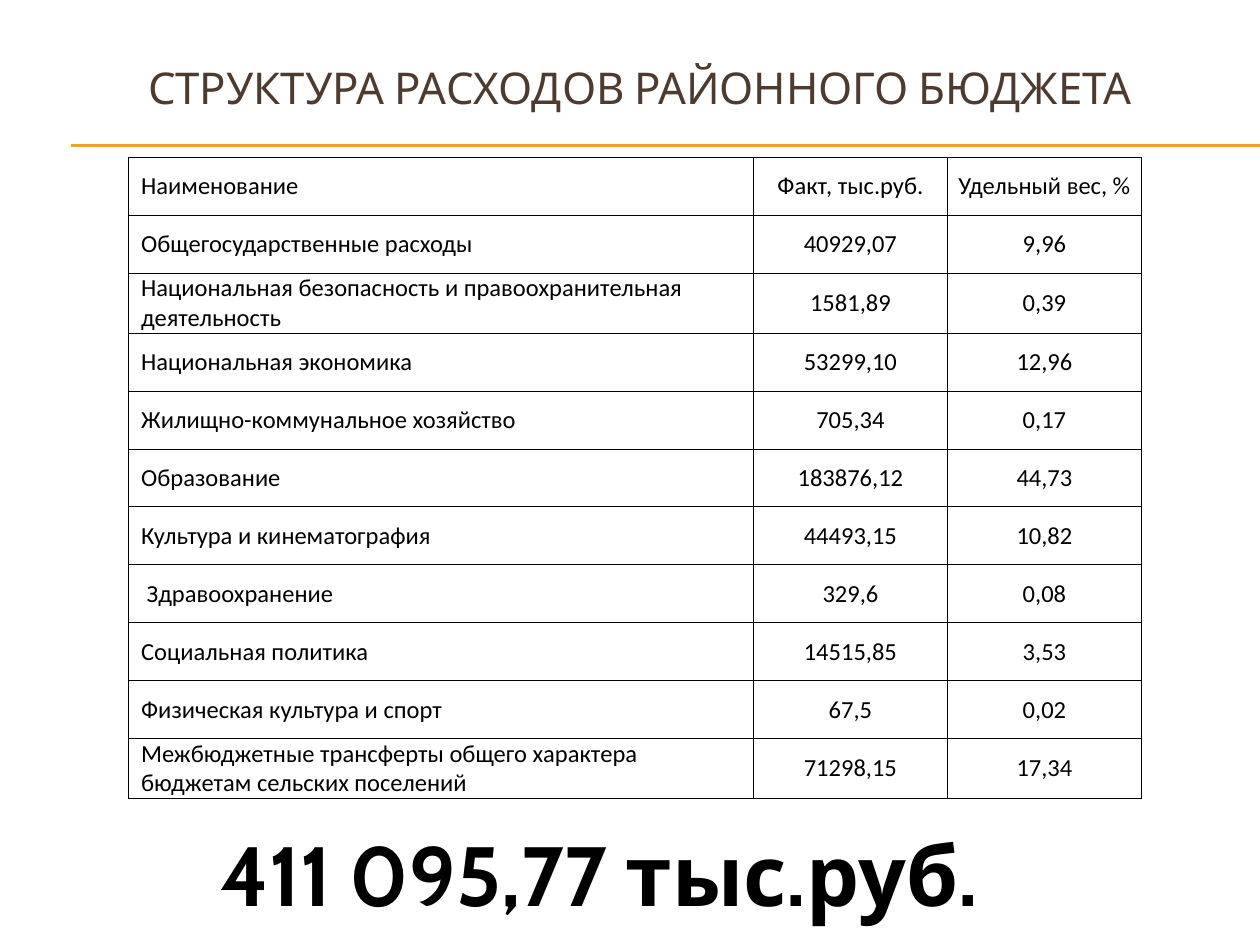
import pptx
import pptx.util
import pptx.dml.color
import pptx.enum.text
import pptx.enum.shapes
import pptx.oxml
import pptx.oxml.ns
from pptx.util import Inches

ALIGN = pptx.enum.text.PP_ALIGN
MIDDLE = pptx.enum.text.MSO_ANCHOR.MIDDLE
BLACK, BROWN, GOLD = "000000", "4E3B30", "F0A22E"
SPACE = pptx.oxml.ns.nsdecls("a")

ROWS = [
    ("Наименование", "Факт, тыс.руб.", "Удельный вес, %"),
    ("Общегосударственные расходы", "40929,07", "9,96"),
    ("Национальная безопасность и правоохранительная деятельность", "1581,89", "0,39"),
    ("Национальная экономика", "53299,10", "12,96"),
    ("Жилищно-коммунальное хозяйство", "705,34", "0,17"),
    ("Образование", "183876,12", "44,73"),
    ("Культура и кинематография", "44493,15", "10,82"),
    (" Здравоохранение", "329,6", "0,08"),
    ("Социальная политика", "14515,85", "3,53"),
    ("Физическая культура и спорт", "67,5", "0,02"),
    ("Межбюджетные трансферты общего характера бюджетам сельских поселений",
     "71298,15", "17,34"),
]
WIDTHS = (4.96, 1.54, 1.54)
ROW_HEIGHT = 0.46


def color(code):
    return pptx.dml.color.RGBColor.from_string(code)


def write(frame, text, size, font, code, align=ALIGN.CENTER, bold=False):
    para = frame.paragraphs[0]
    para.text = text
    para.alignment = align
    para.font.size = pptx.util.Pt(size)
    para.font.name = font
    para.font.bold = bold
    para.font.color.rgb = color(code)
    return para


def add_title(slide, text):
    title = slide.shapes.title
    title.left, title.top = Inches(0.33), Inches(0.23)
    title.width, title.height = Inches(9.5), Inches(0.92)
    title.text_frame.vertical_anchor = MIDDLE
    write(title.text_frame, text, 25, "Cabin", BROWN)


def add_rule(slide, top):
    rule = slide.shapes.add_connector(
        pptx.enum.shapes.MSO_CONNECTOR.STRAIGHT,
        Inches(0.56), Inches(top), Inches(10), Inches(top))
    rule.line.color.rgb = color(GOLD)
    rule.line.width = pptx.util.Pt(0.75)
    rule.element.spPr.append(pptx.oxml.parse_xml(f"<a:effectLst {SPACE}/>"))


def add_border(cell):
    # Border lines must come before the fill
    props = cell._tc.get_or_add_tcPr()
    for index, side in enumerate("LRTB"):
        props.insert(index, pptx.oxml.parse_xml(
            f'<a:ln{side} {SPACE} w="6350"><a:solidFill>'
            f'<a:srgbClr val="{BLACK}"/></a:solidFill></a:ln{side}>'))


def fill_cell(cell, text, first):
    cell.margin_left = cell.margin_right = 0
    cell.margin_top = cell.margin_bottom = 0
    cell.vertical_anchor = MIDDLE
    cell.fill.background()
    add_border(cell)
    align = ALIGN.LEFT if first else ALIGN.CENTER
    para = write(cell.text_frame, text, 14, "Calibri", BLACK, align)
    if first:
        props = para._p.get_or_add_pPr()
        props.set("marL", str(Inches(0.1)))
        props.set("indent", "0")


def add_table(slide):
    table = slide.shapes.add_table(
        len(ROWS), len(WIDTHS), Inches(1.02), Inches(1.25),
        Inches(sum(WIDTHS)), Inches(ROW_HEIGHT * len(ROWS))).table
    table.first_row = table.horz_banding = False
    for col, width in zip(table.columns, WIDTHS):
        col.width = Inches(width)
    for r, row in enumerate(ROWS):
        table.rows[r].height = Inches(ROW_HEIGHT)
        for c, text in enumerate(row):
            fill_cell(table.cell(r, c), text, c == 0)


def add_total(slide, text):
    # Wide enough to hold the sum on one line
    box = slide.shapes.add_textbox(
        Inches(1.26), Inches(6.48), Inches(7), Inches(0.78))
    box.text_frame.word_wrap = True
    write(box.text_frame, text, 48, "Cabin", BLACK, bold=True)


def main():
    deck = pptx.Presentation()
    deck.slide_width, deck.slide_height = Inches(10), Inches(7.5)
    slide = deck.slides.add_slide(deck.slide_layouts[5])
    # Heading and double rule
    for top in (1.15, 1.16):
        add_rule(slide, top)
    add_title(slide, "СТРУКТУРА РАСХОДОВ РАЙОННОГО БЮДЖЕТА")
    # Spending and total
    add_table(slide)
    add_total(slide, "411 095,77 тыс.руб.")
    deck.save("out.pptx")


if __name__ == "__main__":
    main()
